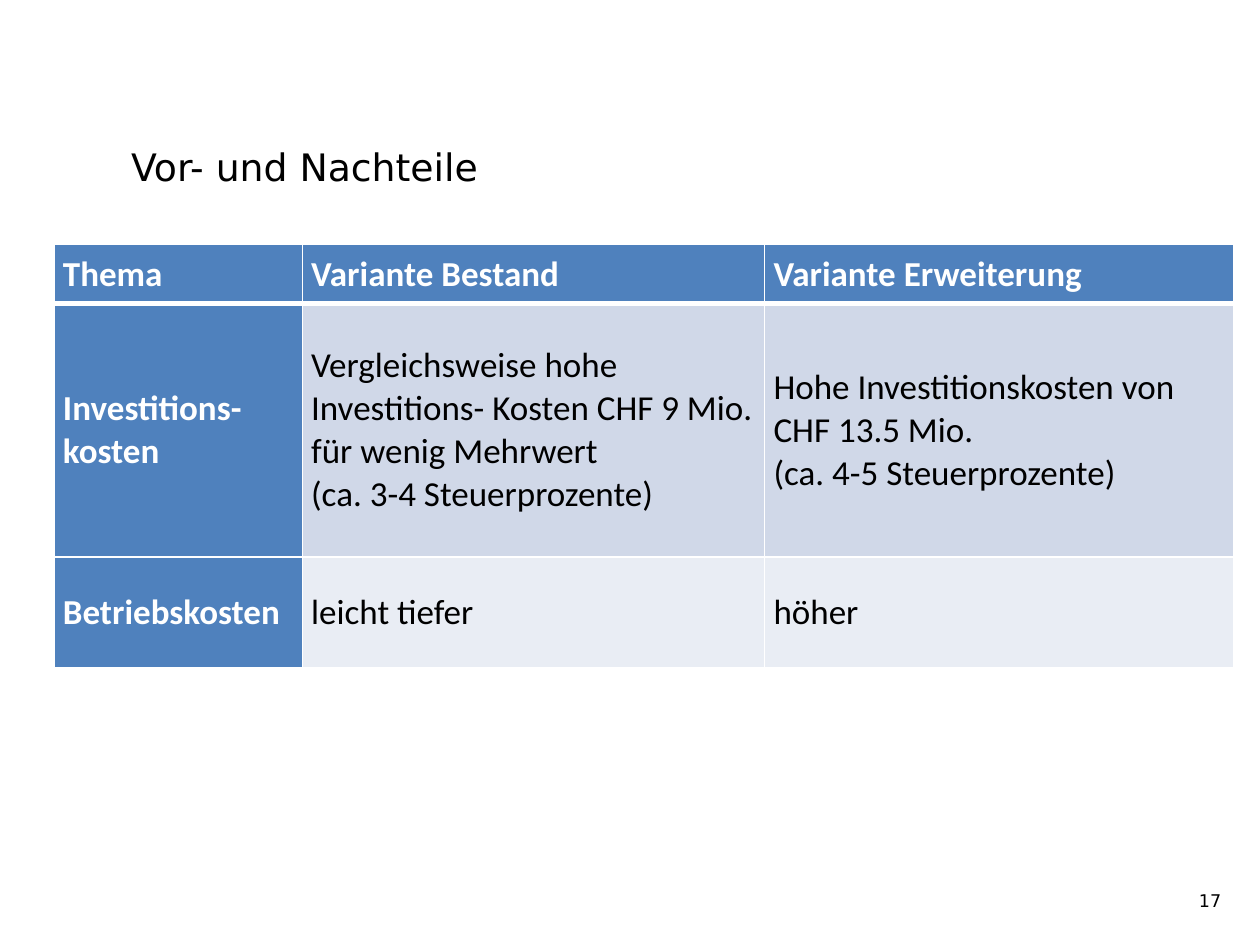
from dataclasses import dataclass

from lxml.etree import SubElement
from pptx import Presentation
from pptx.dml.color import RGBColor
from pptx.enum.text import MSO_ANCHOR as Anchor, MSO_AUTO_SIZE as AutoSize, PP_ALIGN as Align
from pptx.oxml.ns import qn
from pptx.util import Inches, Pt

WHITE, BLACK, BLUE = "FFFFFF", "000000", "4F81BD"
HEADING_FONT, TABLE_FONT = "DejaVu Sans", "Calibri"
COLUMN_WIDTHS = (1.97, 3.67, 3.72)


@dataclass
class TableRow:
    height: float
    body_fill: str
    cells: list[list[str]]  # paragraphs of each cell


ROWS = [
    TableRow(0.47, BLUE, [["Thema"], ["Variante Bestand"], ["Variante Erweiterung"]]),
    TableRow(2.01, "D0D8E8", [
        ["Investitions-kosten"],
        ["Vergleichsweise hohe Investitions- Kosten CHF 9 Mio.",
         "für wenig Mehrwert",
         "(ca. 3-4 Steuerprozente)"],
        ["Hohe Investitionskosten von CHF 13.5 Mio.", "(ca. 4-5 Steuerprozente)"],
    ]),
    TableRow(0.88, "E9EDF4", [["Betriebskosten"], ["leicht tiefer"], ["höher"]]),
]


def rgb(color: str) -> RGBColor:
    return RGBColor.from_string(color)


def add_run(paragraph, text: str, size: float, font: str, color: str, bold: bool = False) -> None:
    run = paragraph.add_run()
    run.text = text
    run.font.size = Pt(size)
    run.font.name = font
    run.font.bold = bold
    run.font.color.rgb = rgb(color)


def set_borders(cell, bottom_width: float) -> None:
    """Draw white cell borders; call before filling, as borders precede the fill."""
    properties = cell._tc.get_or_add_tcPr()
    for side, width in (("L", 1), ("R", 1), ("T", 1), ("B", bottom_width)):
        line = SubElement(properties, qn(f"a:ln{side}"), w=str(Pt(width)))
        fill = SubElement(line, qn("a:solidFill"))
        SubElement(fill, qn("a:srgbClr"), val=WHITE)


def format_cell(cell, lines: list[str], fill: str, is_header: bool, is_heading: bool) -> None:
    set_borders(cell, 3 if is_header else 1)
    cell.fill.solid()
    cell.fill.fore_color.rgb = rgb(fill)
    cell.vertical_anchor = Anchor.MIDDLE
    cell.margin_left = cell.margin_right = Inches(0.07)
    cell.margin_top = cell.margin_bottom = 0
    frame = cell.text_frame
    for index, line in enumerate(lines):
        paragraph = frame.add_paragraph() if index else frame.paragraphs[0]
        add_run(paragraph, line, 20, TABLE_FONT, WHITE if is_heading else BLACK, is_heading)


def add_title(slide) -> None:
    title = slide.shapes.title
    title.left, title.top = Inches(0.94), Inches(0.84)
    title.width, title.height = Inches(8.86), Inches(0.59)
    frame = title.text_frame
    frame.auto_size = AutoSize.NONE
    frame.vertical_anchor = Anchor.TOP
    frame.margin_top = Inches(0.3)
    frame.margin_bottom = 0
    frame.paragraphs[0].alignment = Align.LEFT
    add_run(frame.paragraphs[0], "Vor- und Nachteile", 21.6, HEADING_FONT, BLACK)


def add_comparison_table(slide) -> None:
    table = slide.shapes.add_table(
        len(ROWS), len(COLUMN_WIDTHS), Inches(0.43), Inches(1.94),
        Inches(sum(COLUMN_WIDTHS)), Inches(sum(row.height for row in ROWS)),
    ).table
    for column, width in zip(table.columns, COLUMN_WIDTHS):
        column.width = Inches(width)
    for row_index, row in enumerate(ROWS):
        table.rows[row_index].height = Inches(row.height)
        for column_index, lines in enumerate(row.cells):
            is_header = row_index == 0
            is_heading = is_header or column_index == 0
            fill = BLUE if is_heading else row.body_fill
            format_cell(table.cell(row_index, column_index), lines, fill, is_header, is_heading)


def add_page_number(slide) -> None:
    box = slide.shapes.add_textbox(Inches(7.46), Inches(6.95), Inches(2.33), Inches(0.4))
    frame = box.text_frame
    frame.word_wrap = True
    frame.vertical_anchor = Anchor.MIDDLE
    frame.paragraphs[0].alignment = Align.RIGHT
    add_run(frame.paragraphs[0], "17", 10, HEADING_FONT, BLACK)


def main() -> None:
    presentation = Presentation()
    presentation.slide_width, presentation.slide_height = Inches(10), Inches(7.5)
    slide = presentation.slides.add_slide(presentation.slide_layouts.get_by_name("Title Only"))
    add_title(slide)
    add_comparison_table(slide)
    add_page_number(slide)
    presentation.save("out.pptx")


if __name__ == "__main__":
    main()
